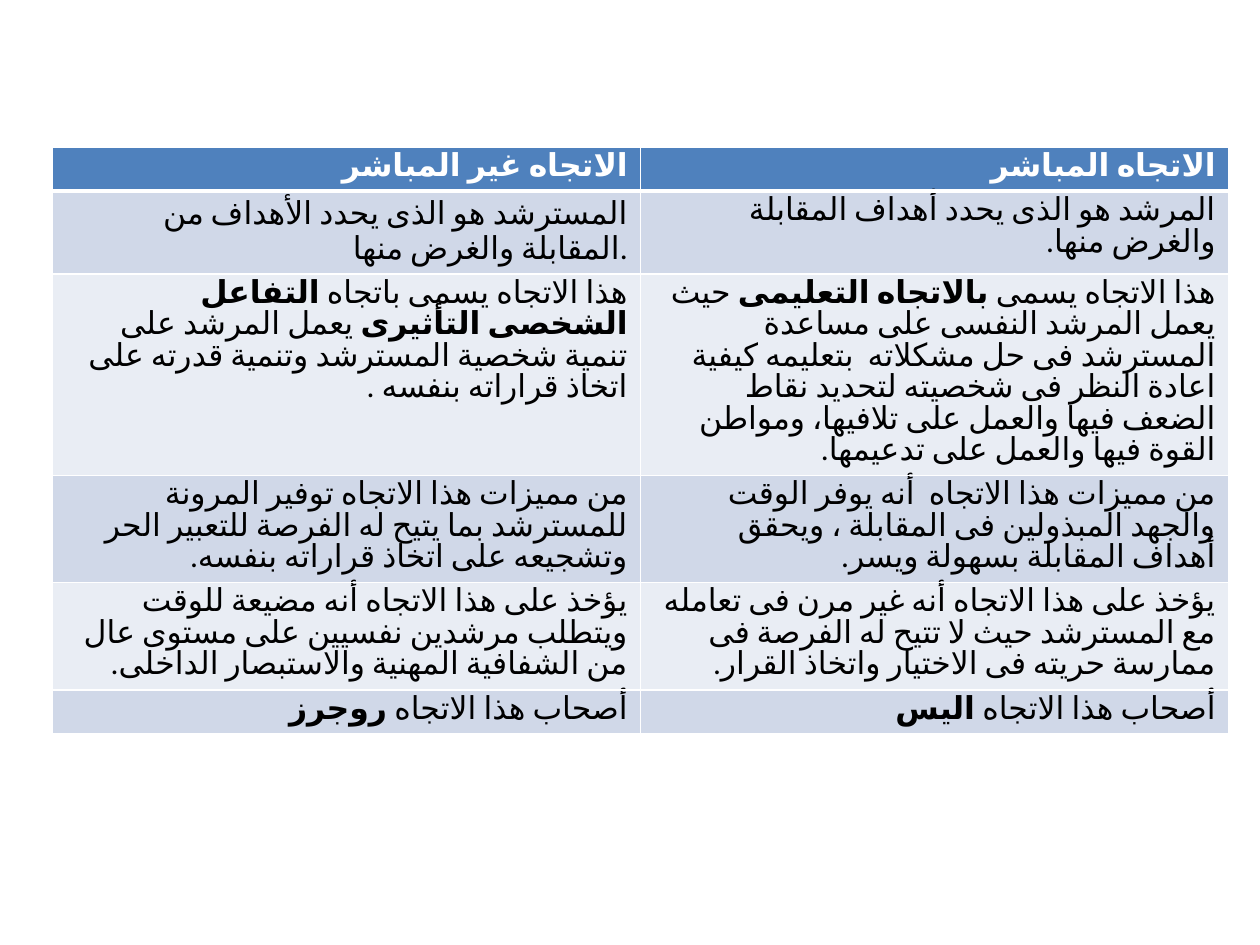
import lxml.etree
import pptx
import pptx.dml.color
import pptx.enum.text
import pptx.oxml
import pptx.oxml.ns
import pptx.util

Pt = pptx.util.Pt
RGBColor = pptx.dml.color.RGBColor

WHITE = RGBColor(0xFF, 0xFF, 0xFF)
BLACK = RGBColor(0, 0, 0)
HEADER = RGBColor(0x4F, 0x81, 0xBD)
BAND_DARK = RGBColor(0xD0, 0xD8, 0xE8)
BAND_LIGHT = RGBColor(0xE9, 0xED, 0xF4)

FONT = "Calibri"
SIZE = Pt(18)
COL_WIDTH = 336
ROW_HEIGHTS = [25.2, 46.8, 115.2, 61.2, 61.2, 25.2]
LTR_CELL = (1, 0)  # the one cell whose paragraph runs left to right

# Each cell is a list of runs; every second run is bold.
ROWS = [
    (["", "الاتجاه غير المباشر"],
     ["", "الاتجاه المباشر"]),
    (["المسترشد هو الذى يحدد الأهداف من المقابلة والغرض منها."],
     ["المرشد هو الذى يحدد أهداف المقابلة والغرض منها."]),
    (["هذا الاتجاه يسمى باتجاه ", "التفاعل الشخصى التأثيرى ",
      "يعمل المرشد على تنمية شخصية المسترشد وتنمية قدرته على اتخاذ "
      "قراراته بنفسه ."],
     ["هذا الاتجاه يسمى ", "بالاتجاه التعليمى ",
      "حيث يعمل المرشد النفسى على مساعدة المسترشد فى حل مشكلاته  بتعليمه "
      "كيفية اعادة النظر فى شخصيته لتحديد نقاط الضعف فيها والعمل على "
      "تلافيها، ومواطن القوة فيها والعمل على تدعيمها."]),
    (["من مميزات هذا الاتجاه توفير المرونة للمسترشد بما يتيح له الفرصة "
      "للتعبير الحر وتشجيعه على اتخاذ قراراته بنفسه."],
     ["من مميزات هذا الاتجاه  أنه يوفر الوقت والجهد المبذولين فى المقابلة ، "
      "ويحقق أهداف المقابلة بسهولة ويسر."]),
    (["يؤخذ على هذا الاتجاه أنه مضيعة للوقت ويتطلب مرشدين نفسيين على مستوى "
      "عال من الشفافية المهنية والاستبصار الداخلى."],
     ["يؤخذ على هذا الاتجاه أنه غير مرن فى تعامله مع المسترشد حيث لا تتيح له "
      "الفرصة فى ممارسة حريته فى الاختيار واتخاذ القرار."]),
    (["أصحاب هذا الاتجاه ", "روجرز"],
     ["أصحاب هذا الاتجاه ", "اليس"]),
]


def set_borders(cell, top, bottom):
    """Draw white cell borders, 1 pt at the sides."""
    tc_pr = cell._tc.get_or_add_tcPr()
    widths = {"lnL": 1, "lnR": 1, "lnT": top, "lnB": bottom}
    for i, (tag, width) in enumerate(widths.items()):
        tc_pr.insert(i, pptx.oxml.parse_xml(
            f'<a:{tag} {pptx.oxml.ns.nsdecls("a")} w="{Pt(width)}">'
            f'<a:solidFill><a:srgbClr val="{WHITE}"/></a:solidFill></a:{tag}>'))


def set_arabic_font(r):
    """Name the font and language that Arabic letters use."""
    r_pr = r._r.get_or_add_rPr()
    r_pr.set("lang", "ar-EG")
    cs = lxml.etree.SubElement(r_pr, pptx.oxml.ns.qn("a:cs"))
    cs.set("typeface", FONT)


def add_runs(cell, runs, color, rtl):
    p = cell.text_frame.paragraphs[0]
    p.alignment = pptx.enum.text.PP_ALIGN.RIGHT
    p.line_spacing = Pt(18 if rtl else 20)
    p._p.get_or_add_pPr().set("rtl", "1" if rtl else "0")
    for i, text in enumerate(runs):
        if not text:
            continue
        r = p.add_run()
        r.text = text
        r.font.name = FONT
        r.font.size = SIZE
        r.font.bold = i % 2 == 1
        r.font.color.rgb = color
        set_arabic_font(r)


def add_comparison_table(s):
    frame = s.shapes.add_table(len(ROWS), 2, Pt(30), Pt(84),
                               Pt(2 * COL_WIDTH), Pt(sum(ROW_HEIGHTS)))
    table = frame.table
    for col in table.columns:
        col.width = Pt(COL_WIDTH)
    for i, (row, height) in enumerate(zip(ROWS, ROW_HEIGHTS)):
        table.rows[i].height = Pt(height)
        fill = HEADER if i == 0 else BAND_DARK if i % 2 else BAND_LIGHT
        for j, runs in enumerate(row):
            cell = table.cell(i, j)
            cell.fill.solid()
            cell.fill.fore_color.rgb = fill
            set_borders(cell, 3 if i == 1 else 1, 3 if i == 0 else 1)
            add_runs(cell, runs, WHITE if i == 0 else BLACK, (i, j) != LTR_CELL)


def main():
    prs = pptx.Presentation()
    prs.slide_width, prs.slide_height = Pt(720), Pt(540)
    s = prs.slides.add_slide(prs.slide_layouts[6])
    add_comparison_table(s)
    prs.save("out.pptx")


if __name__ == "__main__":
    main()
